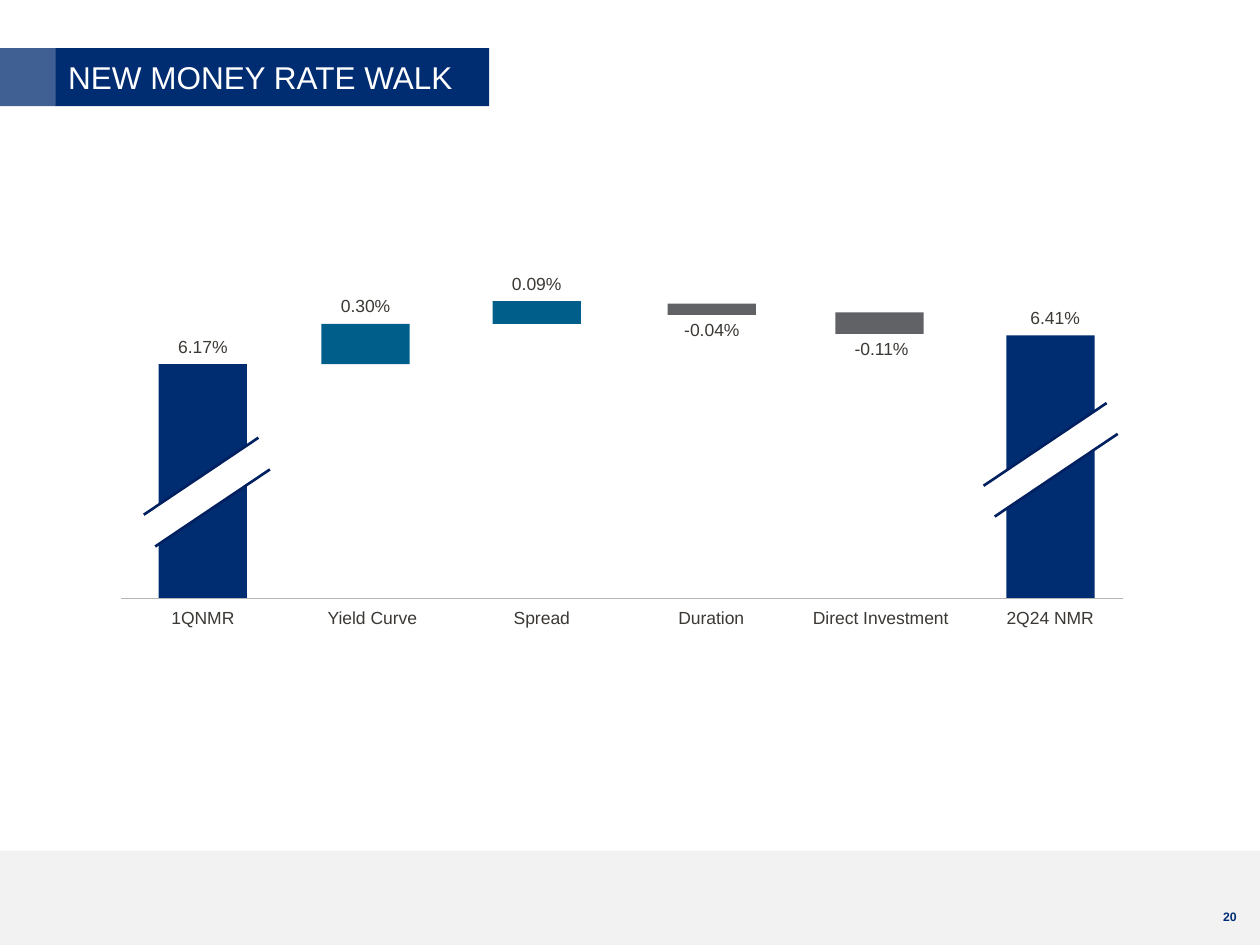
from dataclasses import dataclass
from math import cos, radians, sin

from lxml import etree
from pptx import Presentation
from pptx.dml.color import RGBColor
from pptx.enum.shapes import MSO_CONNECTOR, MSO_SHAPE
from pptx.enum.text import MSO_ANCHOR, MSO_AUTO_SIZE, PP_ALIGN
from pptx.oxml.ns import qn
from pptx.util import Cm, Pt

RECT, PARALLELOGRAM = MSO_SHAPE.RECTANGLE, MSO_SHAPE.PARALLELOGRAM
STRAIGHT = MSO_CONNECTOR.STRAIGHT
MIDDLE, TOP = MSO_ANCHOR.MIDDLE, MSO_ANCHOR.TOP
LEFT, CENTER = PP_ALIGN.LEFT, PP_ALIGN.CENTER
TITLE_ONLY = 5


@dataclass(frozen=True)
class Theme:
    font: str = "Arial"
    navy: str = "002C71"
    teal: str = "005E8A"
    gray: str = "616265"
    cut: str = "002060"
    axis: str = "B3B5B7"
    text: str = "3C3834"
    number: str = "002E76"
    footer: str = "F2F2F2"
    white: str = "FFFFFF"
    title_size: int = 18
    label_size: int = 10
    number_size: int = 7


THEME = Theme()
BAR_W = 1.78
AXIS_Y = 12.06
LABEL_W, LABEL_H = 3.5, 0.7
FIRST_CENTER, STEP = 4.09, 3.416

# Category, value, bar left, top, height, colour, label below, label shift
BARS = [
    ("1QNMR", "6.17%", 3.2, 7.34, 4.72, THEME.navy, False, 0),
    ("Yield Curve", "0.30%", 6.48, 6.53, 0.81, THEME.teal, False, 0),
    ("Spread", "0.09%", 9.93, 6.07, 0.46, THEME.teal, False, 0),
    ("Duration", "-0.04%", 13.46, 6.12, 0.23, THEME.gray, True, 0),
    ("Direct Investment", "-0.11%", 16.84, 6.3, 0.43, THEME.gray, True, 0.04),
    ("2Q24 NMR", "6.41%", 20.29, 6.76, 5.31, THEME.navy, False, 0.09),
]


def add_block(shapes, kind, x, y, w, h, color, alpha=None):
    s = shapes.add_shape(kind, Cm(x), Cm(y), Cm(w), Cm(h))
    s.shadow.inherit = False
    s.fill.solid()
    s.fill.fore_color.rgb = RGBColor.from_string(color)
    s.line.fill.background()
    if alpha is not None:
        clr = s.fill._xPr.find(f".//{qn('a:srgbClr')}")
        etree.SubElement(clr, qn("a:alpha"), val=str(alpha * 1000))
    return s


def add_line(shapes, x1, y1, x2, y2, color, width):
    c = shapes.add_connector(STRAIGHT, Cm(x1), Cm(y1), Cm(x2), Cm(y2))
    c.line.color.rgb = RGBColor.from_string(color)
    c.line.width = Pt(width)
    etree.SubElement(c._element.spPr, qn("a:effectLst"))


def write(s, text, size, color, align, anchor=TOP, bold=False):
    tf = s.text_frame
    frame_format = {"word_wrap": True, "auto_size": MSO_AUTO_SIZE.NONE,
                    "vertical_anchor": anchor}
    for name, value in frame_format.items():
        setattr(tf, name, value)
    p = tf.paragraphs[0]
    p.alignment = align
    r = p.add_run()
    r.text = text
    font_format = {"name": THEME.font, "size": Pt(size), "bold": bold}
    for name, value in font_format.items():
        setattr(r.font, name, value)
    r.font.color.rgb = RGBColor.from_string(color)


def add_label(shapes, text, center, y):
    s = shapes.add_textbox(Cm(center - LABEL_W / 2), Cm(y), Cm(LABEL_W), Cm(LABEL_H))
    write(s, text, THEME.label_size, THEME.text, CENTER)


def add_title(slide, text):
    s = slide.shapes.title
    box = {"left": 1.12, "top": 0.97, "width": 8.74, "height": 1.17}
    for name, value in box.items():
        setattr(s, name, Cm(value))
    s.fill.solid()
    s.fill.fore_color.rgb = RGBColor.from_string(THEME.navy)
    write(s, text, THEME.title_size, THEME.white, LEFT, MIDDLE)


def add_axis_break(slide, cx, cy, w, h, angle=-33.9):
    """Slanted white gap with a line along each of its long edges."""
    shapes = slide.shapes.add_group_shape().shapes
    gap = add_block(shapes, PARALLELOGRAM, cx - w / 2, cy - h / 2, w, h, THEME.white)
    gap.rotation = angle
    slant = h * gap.adjustments[0]
    ca, sa = cos(radians(angle)), sin(radians(angle))
    half = (w - slant) / 2
    for side in (-1, 1):
        dx, dy = -side * slant / 2, side * h / 2
        mx, my = cx + dx * ca - dy * sa, cy + dx * sa + dy * ca
        add_line(shapes, mx - half * ca, my - half * sa,
                 mx + half * ca, my + half * sa, THEME.cut, 1.5)


def main():
    prs = Presentation()
    prs.slide_width, prs.slide_height = Cm(25.4), Cm(19.05)
    slide = prs.slides.add_slide(prs.slide_layouts[TITLE_ONLY])
    shapes = slide.shapes

    # Footer band and page number
    add_block(shapes, RECT, 0, 17.15, 25.4, 1.9, THEME.footer)
    number = shapes.add_textbox(Cm(24.41), Cm(18.21), Cm(1.04), Cm(0.56))
    write(number, "20", THEME.number_size, THEME.number, LEFT, bold=True)

    # Title bar
    add_block(shapes, RECT, 0, 0.97, 1.13, 1.17, THEME.navy, alpha=75)
    add_title(slide, "NEW MONEY RATE WALK")

    # Waterfall bars with their labels
    for i, (category, value, x, y, h, color, below, shift) in enumerate(BARS):
        add_block(shapes, RECT, x, y, BAR_W, h, color)
        value_y = y + h - 0.04 if below else y - 0.7
        add_label(shapes, value, x + BAR_W / 2 + shift, value_y)
        add_label(shapes, category, FIRST_CENTER + i * STEP, AXIS_Y + 0.06)

    # Axis and breaks in the two total bars
    add_line(shapes, 2.44, AXIS_Y, 22.63, AXIS_Y, THEME.axis, 0.5)
    add_axis_break(slide, 4.17, 9.92, 2.95, 0.66)
    add_axis_break(slide, 21.18, 9.27, 3.15, 0.64)

    prs.save("out.pptx")


if __name__ == "__main__":
    main()
